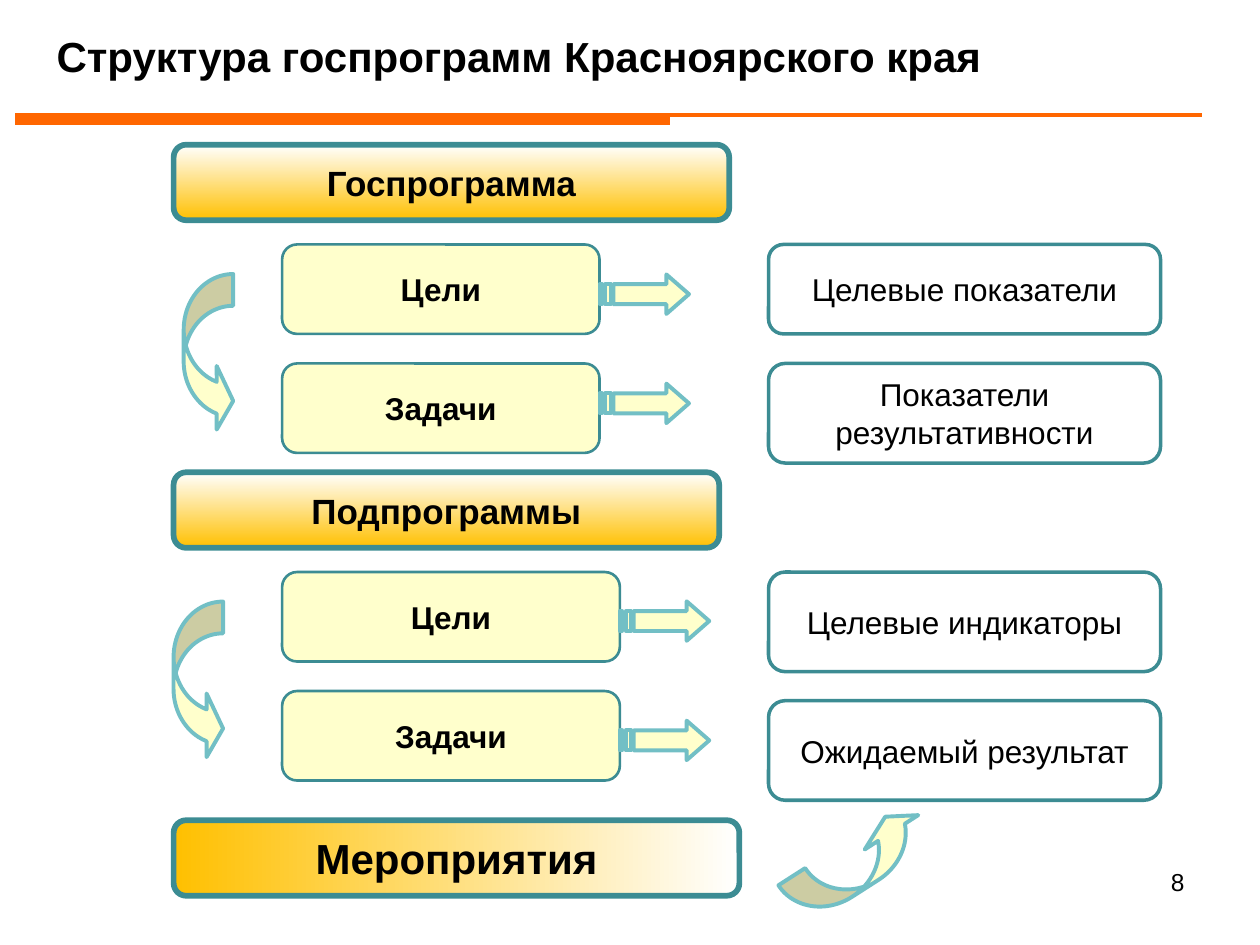
import pptx
import pptx.util
import pptx.dml.color
import pptx.enum.shapes
import pptx.enum.text
import lxml.etree

Pt = pptx.util.Pt
RGB = pptx.dml.color.RGBColor
SHAPE = pptx.enum.shapes.MSO_SHAPE
ALIGN = pptx.enum.text.PP_ALIGN
ANCHOR = pptx.enum.text.MSO_ANCHOR

BLACK = RGB(0, 0, 0)
WHITE = RGB(0xFF, 0xFF, 0xFF)
ORANGE = RGB(0xFF, 0x66, 0x00)
AMBER = RGB(0xFF, 0xC0, 0x00)
CREAM = RGB(0xFF, 0xFF, 0xCC)
TEAL = RGB(0x3C, 0x8C, 0x93)
AQUA = RGB(0x72, 0xBF, 0xC5)

ARROW_PATHS = (
    ((38.2, 0), (38.2, 5.6), (7.9, 5.6), (7.9, 17), (38.2, 17), (38.2, 22.6), (51.1, 11.3)),
    ((3.4, 5.6), (3.4, 17), (6.6, 17), (6.6, 5.6)),
    ((0, 5.6), (0, 17), (1.4, 17), (1.4, 5.6)),
)


def write(s, text, size, bold=False, align=ALIGN.CENTER, **frame):
    tf = s.text_frame
    settings = {"word_wrap": True, "vertical_anchor": ANCHOR.MIDDLE, **frame}
    for name, value in settings.items():
        setattr(tf, name, value)
    p = tf.paragraphs[0]
    p.alignment = align
    r = p.add_run()
    r.text = text
    for name, value in {"name": "Arial", "size": Pt(size), "bold": bold}.items():
        setattr(r.font, name, value)
    r.font.color.rgb = BLACK


def outline(s, color, width):
    s.shadow.inherit = False
    s.line.color.rgb = color
    s.line.width = Pt(width)


def fill_solid(s, color):
    s.fill.solid()
    s.fill.fore_color.rgb = color


def add_label(sp, box, text, size, bold, width):
    s = sp.add_shape(SHAPE.ROUNDED_RECTANGLE, *map(Pt, box))
    outline(s, TEAL, width)
    margins = {f"margin_{side}": 0 for side in ("left", "top", "right", "bottom")}
    write(s, text, size, bold, **margins)
    return s


def add_banner(sp, box, text, size=20, angle=90):
    s = add_label(sp, box, text, size, True, 3.25)
    s.fill.gradient()
    s.fill.gradient_angle = angle
    for stop, color in zip(s.fill.gradient_stops, (AMBER, WHITE)):
        stop.color.rgb = color


def add_curved_arrow(sp, x, y, rotation=0):
    s = sp.add_shape(SHAPE.CURVED_RIGHT_ARROW, Pt(x), Pt(y), Pt(28.3), Pt(90.7))
    for i, value in enumerate((0.642, 1.285, 0.333)):
        s.adjustments[i] = value
    s.rotation = rotation
    fill_solid(s, CREAM)
    outline(s, AQUA, 2.25)


def add_striped_arrow(sp, x, y):
    builder = None
    for first, *rest in ARROW_PATHS:
        if builder is None:
            builder = sp.build_freeform(Pt(first[0]), Pt(first[1]))
        else:
            builder.move_to(Pt(first[0]), Pt(first[1]))
        builder.add_line_segments([(Pt(px), Pt(py)) for px, py in rest], close=True)
    s = builder.convert_to_shape(Pt(x), Pt(y))
    fill_solid(s, CREAM)
    outline(s, AQUA, 2.25)


def add_header(sp, x, y, w):
    s = sp.add_textbox(Pt(x + 16.6), Pt(y), Pt(w), Pt(33.8))
    write(s, "Структура госпрограмм Красноярского края", 24, True, ALIGN.LEFT)
    for dy, length, width in ((53.3, 374.4, 6), (50.4, 678.2, 2.25)):
        line = sp.add_connector(
            pptx.enum.shapes.MSO_CONNECTOR.STRAIGHT,
            Pt(x), Pt(y + dy), Pt(x + length), Pt(y + dy))
        line.line.color.rgb = ORANGE
        line.line.width = Pt(width)
        props = line._element.spPr
        lxml.etree.SubElement(props, pptx.oxml.ns.qn("a:effectLst"))


def add_level(sp, x, y, banner, banner_w, curve_dx, step_w, rows):
    add_banner(sp, (x, y, banner_w, 43.2), banner)
    add_curved_arrow(sp, x + curve_dx, y + 73.9)
    for step, step_dy, arrow_dy, result, result_dy, result_h in rows:
        s = add_label(sp, (x + 62, y + step_dy, step_w, 51.1), step, 18, True, 1.5)
        fill_solid(s, CREAM)
        add_striped_arrow(sp, x + 62 + step_w, y + arrow_dy)
        s = add_label(sp, (x + 340, y + result_dy, 224, result_h), result, 18, False, 2)
        s.fill.background()


def add_activities(sp, x, y):
    add_banner(sp, (x, y, 323.3, 43.2), "Мероприятия", 24, 0)
    add_curved_arrow(sp, x + 377.3, y - 20.8, 237.3)


def add_slide_number(sp, x, y, w, h):
    s = sp.add_textbox(Pt(x), Pt(y), Pt(w), Pt(h))
    write(s, "8", 14, align=ALIGN.RIGHT, vertical_anchor=ANCHOR.TOP)


def main():
    prs = pptx.Presentation()
    prs.slide_width, prs.slide_height = Pt(720), Pt(540)
    sp = prs.slides.add_slide(prs.slide_layouts[6]).shapes
    add_header(sp, 8.6, 15.1, 694.8)
    add_level(sp, 99.2, 82.7, "Госпрограмма", 317.5, 5.8, 181.4, (
        ("Цели", 57, 74.1, "Целевые показатели", 57, 51.1),
        ("Задачи", 125, 136.5, "Показатели результативности", 125, 56.9),
    ))
    add_level(sp, 99.2, 269.9, "Подпрограммы", 311.8, 0, 203.5 - 10.5, (
        ("Цели", 57, 73.7, "Целевые индикаторы", 57, 56.9),
        ("Задачи", 125, 141.9, "Ожидаемый результат", 130.5, 56.9),
    ))
    add_activities(sp, 99.2, 468.7)
    add_slide_number(sp, 516.2, 491.8, 167.8, 37.4)
    prs.save("out.pptx")


if __name__ == "__main__":
    main()
